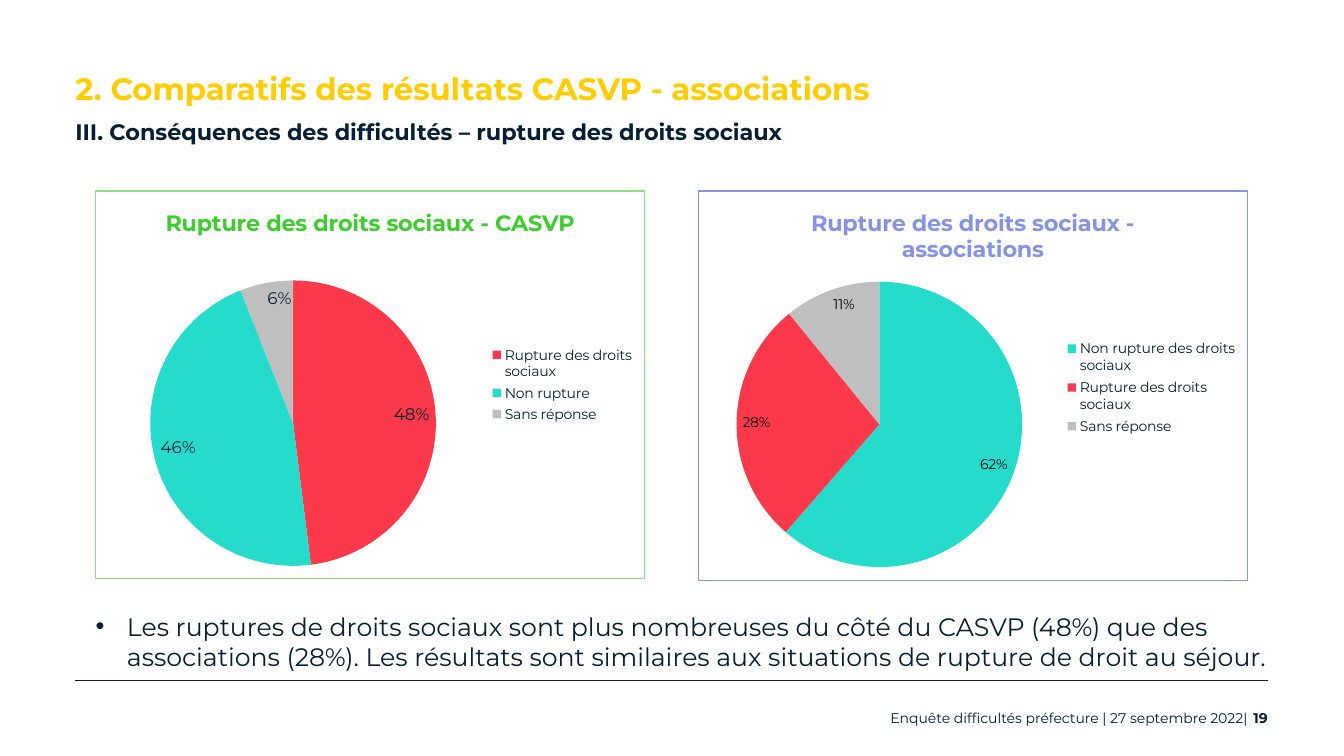
from lxml import etree
from pptx import Presentation
from pptx.chart.data import CategoryChartData
from pptx.dml.color import RGBColor
from pptx.enum.chart import XL_CHART_TYPE, XL_LABEL_POSITION, XL_LEGEND_POSITION
from pptx.enum.shapes import MSO_CONNECTOR
from pptx.enum.text import MSO_ANCHOR, PP_ALIGN
from pptx.oxml import parse_xml
from pptx.oxml.ns import nsdecls, qn
from pptx.util import Cm, Pt

PIE = XL_CHART_TYPE.PIE
INSIDE_END = XL_LABEL_POSITION.INSIDE_END
LEGEND_RIGHT = XL_LEGEND_POSITION.RIGHT
STRAIGHT = MSO_CONNECTOR.STRAIGHT
TOP, MIDDLE, BOTTOM = MSO_ANCHOR.TOP, MSO_ANCHOR.MIDDLE, MSO_ANCHOR.BOTTOM
LEFT, RIGHT = PP_ALIGN.LEFT, PP_ALIGN.RIGHT

FONT = "Montserrat"
NAVY, YELLOW, BLACK = "071F32", "FFCD00", "000000"
RED, TEAL, GREY = "FB394A", "25DCCC", "BFBFBF"
GREEN, LIGHT_GREEN, LILAC = "3ECD2E", "8AE380", "8693E2"


def rgb(value):
    return RGBColor.from_string(value)


def style(font, size, color, bold=False):
    for name, value in {"name": FONT, "size": Pt(size), "bold": bold}.items():
        setattr(font, name, value)
    font.color.rgb = rgb(color)


def add_text(s, box, text, size, color=NAVY, bold=False, anchor=TOP,
             align=LEFT, spacing=1.0, bullet=False):
    tf = s.shapes.add_textbox(*(Cm(v) for v in box)).text_frame
    tf.word_wrap = True
    tf.vertical_anchor = anchor
    p = tf.paragraphs[0]
    p.alignment = align
    p.line_spacing = spacing
    if bullet:
        pPr = p._p.get_or_add_pPr()
        pPr.set("marL", str(Cm(0.79)))
        pPr.set("indent", str(-Cm(0.79)))
        etree.SubElement(pPr, qn("a:buFont")).set("typeface", "Arial")
        etree.SubElement(pPr, qn("a:buChar")).set("char", "•")
    r = p.add_run()
    r.text = text
    style(r.font, size, color, bold)


def add_header(s, left, top, width):
    add_text(s, (left, top, width, 1.3),
             "2. Comparatifs des résultats CASVP - associations",
             22, YELLOW, True, spacing=1.15)
    add_text(s, (left, top + 1.24, width, 1.04),
             "III. Conséquences des difficultés – rupture des droits sociaux",
             16, bold=True, anchor=BOTTOM, spacing=1.3)


def manual_layout(x, y, w, h, inner=False):
    target = '<c:layoutTarget val="inner"/>' if inner else ""
    sizes = "".join(f'<c:{k} val="{v}"/>' for k, v in zip("xywh", (x, y, w, h)))
    return parse_xml(
        f'<c:layout {nsdecls("c")}><c:manualLayout>{target}'
        f'<c:xMode val="edge"/><c:yMode val="edge"/>{sizes}'
        '</c:manualLayout></c:layout>')


def drop_layout(parent):
    for old in parent.findall(qn("c:layout")):
        parent.remove(old)


def add_pie(s, box, title, title_color, border, slices, label_size,
            label_color, plot_layout, legend_layout):
    data = CategoryChartData(number_format="0%")
    data.categories = [name for name, _, _ in slices]
    data.add_series("Series 1", [value for _, value, _ in slices])
    chart = s.shapes.add_chart(PIE, *(Cm(v) for v in box), data).chart
    style(chart.font, 10, NAVY)

    # Title and legend
    chart.has_title = True
    tf = chart.chart_title.text_frame
    tf.text = title
    style(tf.paragraphs[0].runs[0].font, 16, title_color, True)
    chart.chart_title.include_in_layout = False
    chart.has_legend = True
    legend = chart.legend
    legend.position = LEGEND_RIGHT
    legend.include_in_layout = False
    style(legend.font, 10, NAVY)

    # Slices and labels
    plot = chart.plots[0]
    plot.vary_by_categories = True
    for i, (_, _, color) in enumerate(slices):
        fill = plot.series[0].points[i].format.fill
        fill.solid()
        fill.fore_color.rgb = rgb(color)
    plot.has_data_labels = True
    labels = plot.data_labels
    for name, value in {"show_value": True, "show_percentage": False,
                        "number_format": "0%", "number_format_is_linked": False,
                        "position": INSIDE_END}.items():
        setattr(labels, name, value)
    style(labels.font, label_size, label_color)

    # Placement of pie and legend, frame around the chart
    plot_area = chart._chartSpace.chart.plotArea
    drop_layout(plot_area)
    plot_area.insert(0, manual_layout(*plot_layout, inner=True))
    drop_layout(legend._element)
    legend._element.find(qn("c:legendPos")).addnext(manual_layout(*legend_layout))
    chart._chartSpace.chart.addnext(parse_xml(
        f'<c:spPr {nsdecls("c", "a")}><a:noFill/><a:ln w="{Pt(0.75)}"><a:solidFill>'
        f'<a:srgbClr val="{border}"/></a:solidFill></a:ln></c:spPr>'))


def add_footer(s, left, top, right):
    rule = s.shapes.add_connector(STRAIGHT, Cm(left), Cm(top), Cm(right), Cm(top))
    rule.line.color.rgb = rgb(NAVY)
    rule.line.width = Pt(0.65)
    etree.SubElement(rule._element.spPr, qn("a:effectLst"))
    for x, width, text, bold in (
            (right - 17.27, 17, "Enquête difficultés préfecture | 27 septembre 2022|", False),
            (right - 1.25, 1.5, "19", True)):
        add_text(s, (x, top + 0.56, width, 0.71), text, 10, bold=bold,
                 anchor=MIDDLE, align=RIGHT, spacing=1.15)


def main():
    prs = Presentation()
    prs.slide_width, prs.slide_height = Cm(33.87), Cm(19.05)
    s = prs.slides.add_slide(prs.slide_layouts[6])

    add_header(s, 1.65, 1.5, 30)
    add_pie(s, (2.39, 4.8, 13.87, 9.78), "Rupture des droits sociaux - CASVP",
            GREEN, LIGHT_GREEN,
            [("Rupture des droits sociaux", 0.48, RED),
             ("Non rupture", 0.46, TEAL), ("Sans réponse", 0.06, GREY)],
            12, NAVY, (0.1, 0.23, 0.52, 0.74), (0.71, 0.39, 0.28, 0.22))
    add_pie(s, (17.58, 4.8, 13.87, 9.83), "Rupture des droits sociaux - associations",
            LILAC, LILAC,
            [("Non rupture des droits sociaux", 0.62, TEAL),
             ("Rupture des droits sociaux", 0.28, RED), ("Sans réponse", 0.11, GREY)],
            10, BLACK, (0.07, 0.23, 0.52, 0.74), (0.66, 0.37, 0.33, 0.27))
    add_text(s, (2.16, 15.27, 30.5, 1.8),
             "Les ruptures de droits sociaux sont plus nombreuses du côté du CASVP (48%) "
             "que des associations (28%). Les résultats sont similaires aux situations "
             "de rupture de droit au séjour.", 18, bullet=True)
    add_footer(s, 1.9, 17.15, 31.95)

    prs.save("out.pptx")


if __name__ == "__main__":
    main()
